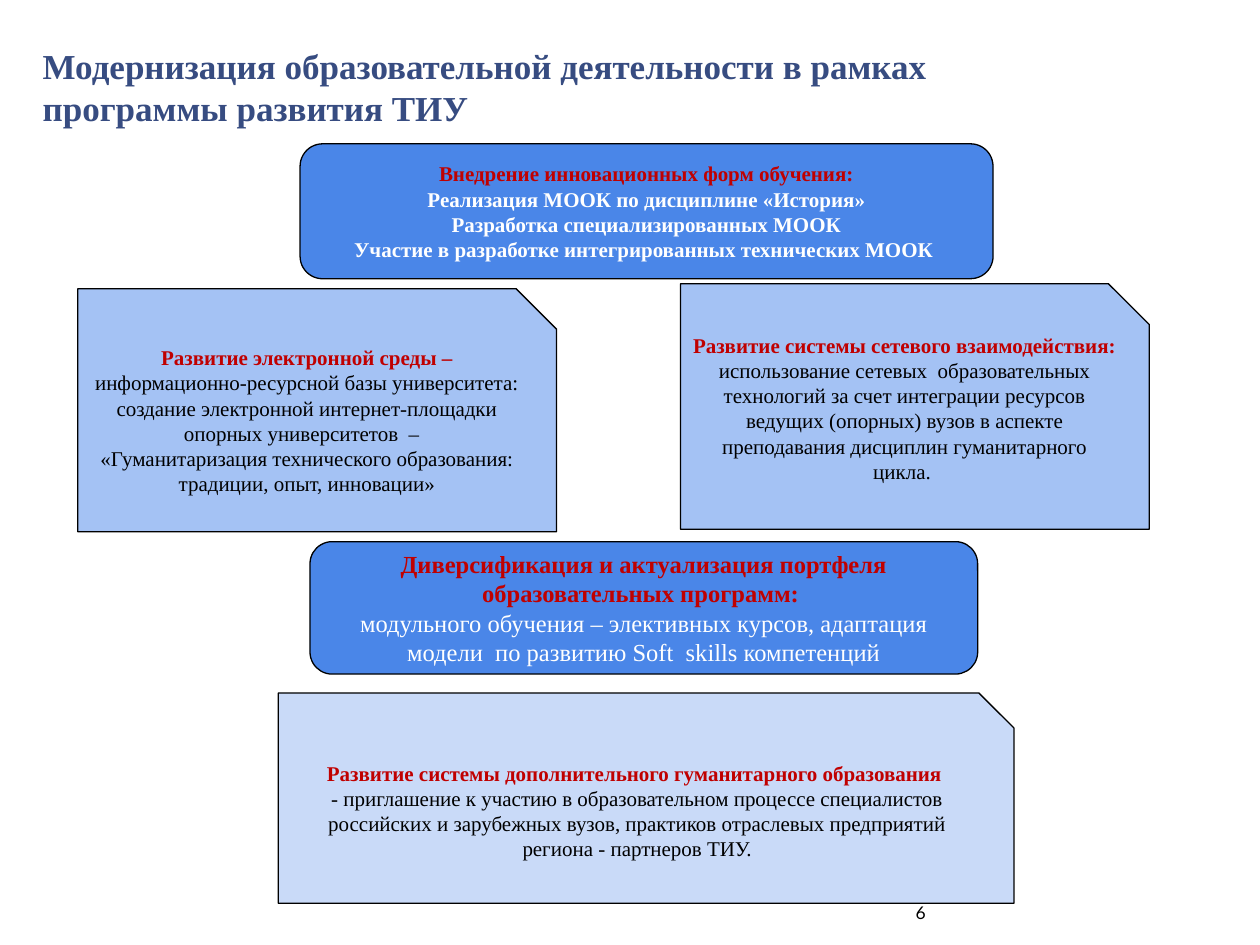
from pptx import Presentation
from pptx import util as u
from pptx.dml.color import RGBColor
from pptx.enum import shapes, text

NAVY = RGBColor(0x37, 0x4C, 0x81)
RED = RGBColor(0xC0, 0x00, 0x00)
BLACK = RGBColor(0x00, 0x00, 0x00)
WHITE = RGBColor(0xFF, 0xFF, 0xFF)
BLUE = RGBColor(0x4A, 0x86, 0xE8)
SKY = RGBColor(0xA4, 0xC2, 0xF4)
PALE = RGBColor(0xC9, 0xDA, 0xF8)
ROUNDED = shapes.MSO_SHAPE.ROUNDED_RECTANGLE
SNIPPED = shapes.MSO_SHAPE.SNIP_1_RECTANGLE


def run(words, size=12, color=BLACK, bold=False, font="Times New Roman"):
    """Describe one run of text as its words and format."""
    return words, dict(size=u.Pt(size), color=color, bold=bold, name=font)


def heading(words, size=12):
    return run(words, size, RED, bold=True)


class SlideBuilder:
    def __init__(self, slide):
        self.slide = slide
        self.inset = 0.25

    def fill_text(self, frame, paragraphs, align, anchor, top, bottom):
        frame.word_wrap = True
        frame.vertical_anchor = anchor
        frame.margin_left = frame.margin_right = u.Cm(self.inset)
        frame.margin_top, frame.margin_bottom = u.Cm(top), u.Cm(bottom)
        for index, runs in enumerate(paragraphs):
            paragraph = frame.add_paragraph() if index else frame.paragraphs[0]
            paragraph.alignment = align
            for words, style in runs:
                part = paragraph.add_run()
                part.text = words
                part.font.size = style["size"]
                part.font.bold = style["bold"]
                part.font.name = style["name"]
                part.font.color.rgb = style["color"]

    def label(self, place, content, anchor=text.MSO_ANCHOR.TOP):
        box = self.slide.shapes.add_textbox(*map(u.Cm, place))
        self.fill_text(box.text_frame, [[content]], text.PP_ALIGN.LEFT, anchor,
                       0.13, 0.13)

    def card(self, kind, place, fill, paragraphs, top=0.25, bottom=0.25):
        card = self.slide.shapes.add_shape(kind, *map(u.Cm, place))
        card.shadow.inherit = False
        card.fill.solid()
        card.fill.fore_color.rgb = fill
        card.line.color.rgb = BLACK
        card.line.width = u.Pt(0.75)
        self.fill_text(card.text_frame, paragraphs, text.PP_ALIGN.CENTER,
                       text.MSO_ANCHOR.MIDDLE, top, bottom)


def main():
    deck = Presentation()
    deck.slide_width, deck.slide_height = u.Cm(25.4), u.Cm(19.05)
    page = SlideBuilder(deck.slides.add_slide(deck.slide_layouts[6]))

    page.label((0.61, 0.76, 19.84, 2.34), run(
        "Модернизация образовательной деятельности в рамках программы развития ТИУ",
        20, NAVY, bold=True))
    page.label((18.21, 17.88, 5.92, 1.02), run("6", 10, font="Lato"),
               text.MSO_ANCHOR.MIDDLE)

    courses = ["Реализация МООК по дисциплине «История»",
               "Разработка специализированных МООК",
               "Участие в разработке интегрированных технических МООК "]
    page.card(ROUNDED, (6.05, 2.9, 13.97, 2.72), BLUE,
              [[heading("Внедрение инновационных форм обучения:")]]
              + [[run(course, color=WHITE, bold=True)] for course in courses])

    page.card(SNIPPED, (1.57, 5.82, 9.65, 4.9), SKY, [
        [heading("Развитие электронной среды – "),
         run("информационно-ресурсной базы университета: создание электронной "
             "интернет-площадки опорных университетов  –  ")],
        [run("«Гуманитаризация технического образования: традиции, опыт, инновации»")]])

    page.card(SNIPPED, (13.72, 5.72, 9.45, 4.95), SKY, [
        [heading("Развитие системы сетевого взаимодействия: ")],
        [run("использование сетевых  образовательных технологий за счет интеграции "
             "ресурсов ведущих (опорных) вузов в аспекте преподавания дисциплин "
             "гуманитарного цикла. ")]], bottom=0.6)

    page.card(ROUNDED, (6.25, 10.92, 13.46, 2.67), BLUE, [
        [heading("Диверсификация и актуализация портфеля образовательных программ: ", 14)],
        [run("модульного обучения – элективных курсов, адаптация модели  по развитию "
             "Soft  skills компетенций", 14, WHITE)]])

    page.card(SNIPPED, (5.61, 13.97, 14.83, 4.24), PALE, [
        [heading("Развитие системы дополнительного гуманитарного образования ")],
        [run("- приглашение к участию в образовательном процессе специалистов "
             "российских и зарубежных вузов, практиков отраслевых предприятий "
             "региона - партнеров ТИУ.")]], top=0.4)

    deck.save("out.pptx")


if __name__ == "__main__":
    main()
